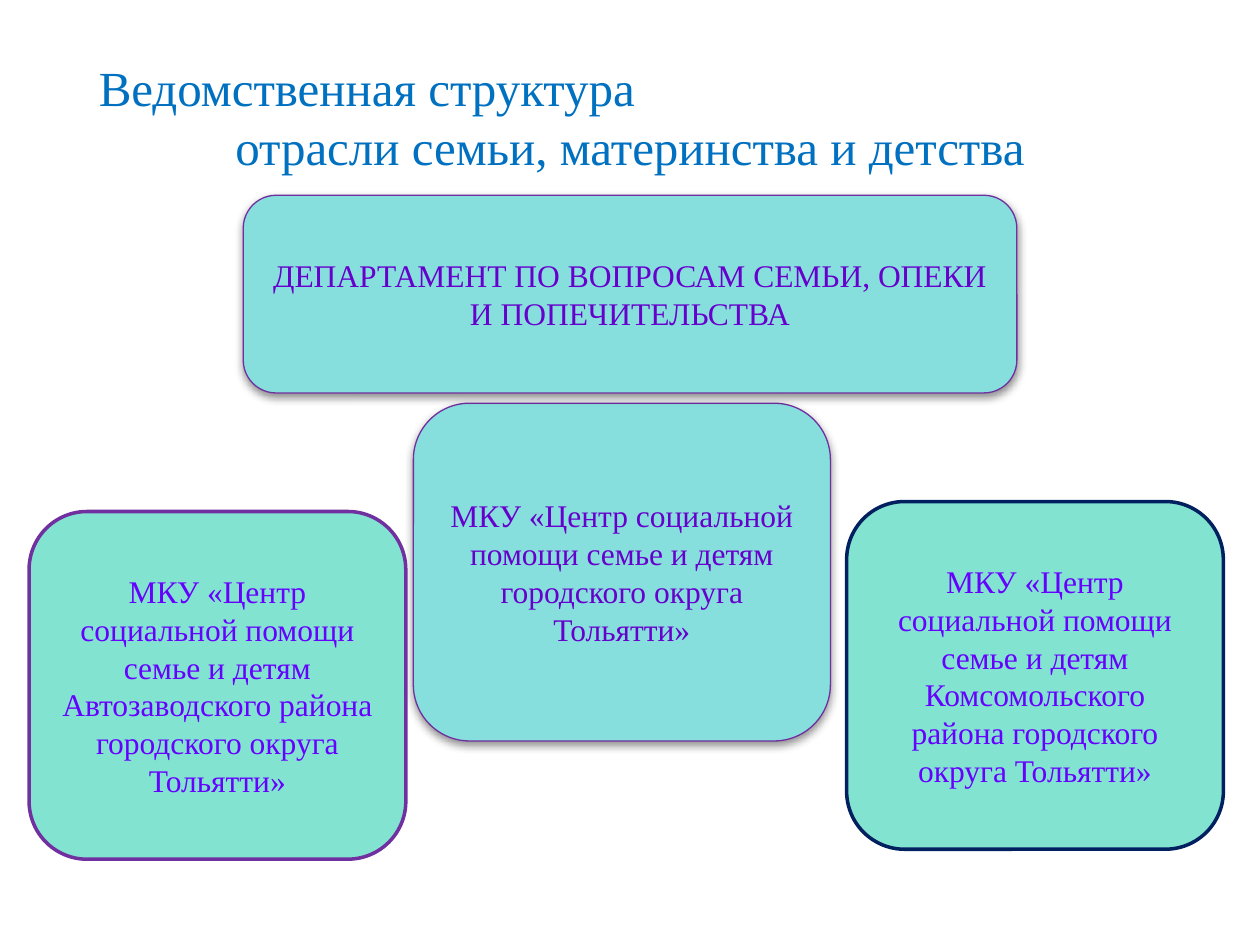
import pptx
import pptx.util
import pptx.dml.color
import pptx.enum.shapes
import pptx.enum.text
import lxml.etree

Pt = pptx.util.Pt
Align = pptx.enum.text.PP_ALIGN
Middle = pptx.enum.text.MSO_ANCHOR.MIDDLE
Round = pptx.enum.shapes.MSO_SHAPE.ROUNDED_RECTANGLE

hues = {
    "title": "0070C0",
    "aqua": "87DFDD",
    "mint": "83E3D1",
    "plum": "7030A0",
    "navy": "002060",
    "grape": "6600CC",
    "violet": "6600FF",
}
shade = (
    '<a:effectLst xmlns:a="http://schemas.openxmlformats.org/drawingml/2006/main">'
    '<a:outerShdw blurRad="63500" dist="25400" dir="5400000" rotWithShape="0">'
    '<a:srgbClr val="000000"><a:alpha val="43000"/></a:srgbClr>'
    "</a:outerShdw></a:effectLst>"
)


def color(name):
    return pptx.dml.color.RGBColor.from_string(hues[name])


def style(frame, size, hue):
    """Centre the text and set its font."""
    frame.word_wrap = True
    frame.vertical_anchor = Middle
    for para in frame.paragraphs:
        para.alignment = Align.CENTER
        for run in para.runs:
            run.font.name = "Times New Roman"
            run.font.size = Pt(size)
            run.font.color.rgb = color(hue)


deck = pptx.Presentation()
deck.slide_width, deck.slide_height = Pt(720), Pt(540)
slide = deck.slides.add_slide(deck.slide_layouts[6])

title = slide.shapes.add_textbox(Pt(36), Pt(21.6), Pt(648), Pt(90))
frame = title.text_frame
frame.text = "Ведомственная структура\nотрасли семьи, материнства и детства"
frame.margin_left = frame.margin_right = Pt(20.5)
style(frame, 28, "title")
frame.paragraphs[0].alignment = Align.LEFT

center = "МКУ «Центр социальной помощи семье и детям {}городского округа Тольятти»"
# text, left, top, width, height, fill, line, line width, font colour, shadow
boxes = [
    (center.format(""),
     236.2, 230.4, 238.3, 193, "aqua", "plum", 0.75, "grape", True),
    (center.format("Автозаводского района "),
     16.6, 292.3, 215.3, 198.7, "mint", "plum", 2, "violet", False),
    (center.format("Комсомольского района "),
     483.8, 286.6, 215.3, 198.7, "mint", "navy", 2, "violet", False),
    ("ДЕПАРТАМЕНТ ПО ВОПРОСАМ СЕМЬИ, ОПЕКИ И ПОПЕЧИТЕЛЬСТВА",
     139, 111.6, 442.1, 113, "aqua", "plum", 0.75, "grape", True),
]

for text, left, top, wide, high, fill, line, weight, ink, raised in boxes:
    box = slide.shapes.add_shape(Round, Pt(left), Pt(top), Pt(wide), Pt(high))
    box.fill.solid()
    box.fill.fore_color.rgb = color(fill)
    box.line.color.rgb = color(line)
    box.line.width = Pt(weight)
    if raised:
        box._element.spPr.append(lxml.etree.fromstring(shade))
    else:
        box.shadow.inherit = False
    box.text_frame.text = text
    style(box.text_frame, 18, ink)

deck.save("out.pptx")
